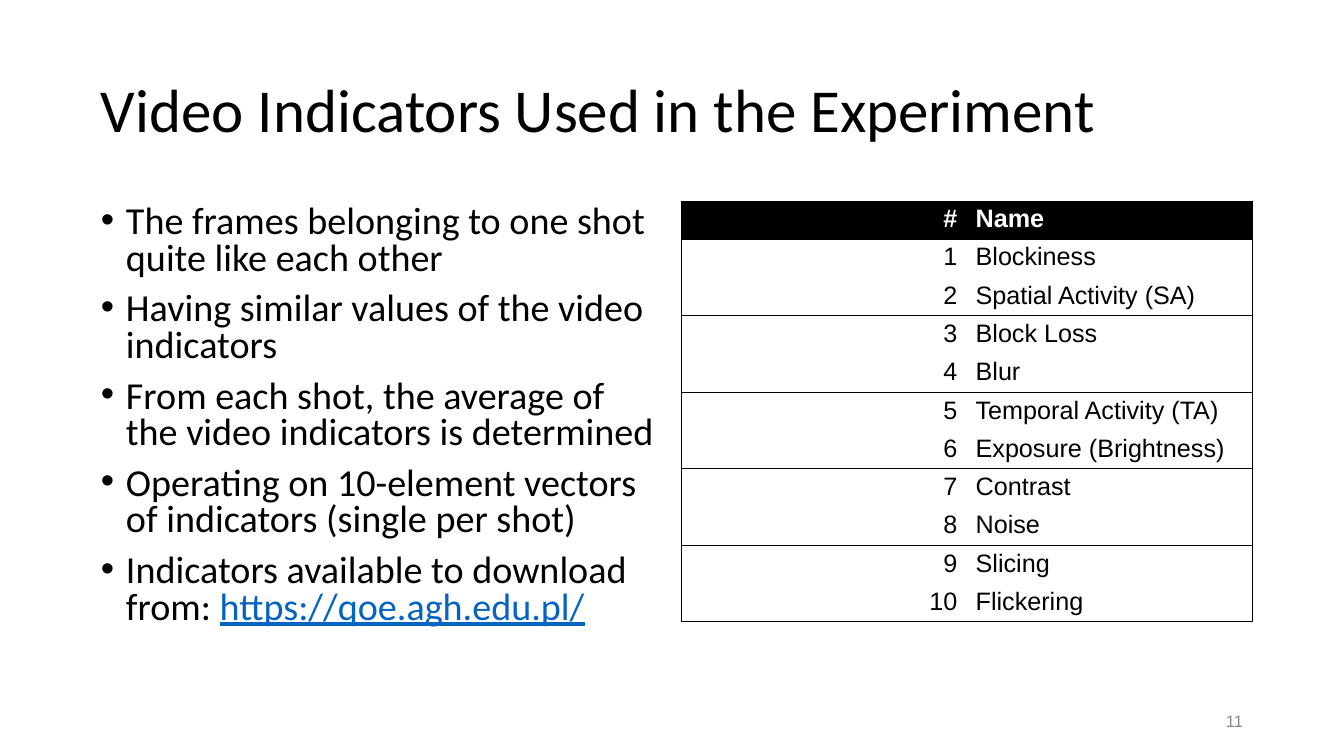
from pptx import Presentation
from pptx.dml.color import RGBColor
from pptx.enum.text import MSO_ANCHOR, PP_ALIGN
from pptx.oxml.ns import qn
from pptx.util import Pt
from lxml.etree import SubElement

EMU_PER_PX = 9993
BLACK, WHITE, GREY, LINK = "000000", "FFFFFF", "898989", "0563C1"
BODY_FONT, TABLE_FONT = "Calibri", "Arial"

BULLETS = [
    "The frames belonging to one shot quite like each other",
    "Having similar values of the video indicators",
    "From each shot, the average of the video indicators is determined",
    "Operating on 10-element vectors of indicators (single per shot)",
    "Indicators available to download from: ",
]
ADDRESS = "https://qoe.agh.edu.pl/"
INDICATORS = [
    "Blockiness", "Spatial Activity (SA)", "Block Loss", "Blur",
    "Temporal Activity (TA)", "Exposure (Brightness)", "Contrast",
    "Noise", "Slicing", "Flickering",
]


def px(length):
    return length * EMU_PER_PX


def colour(value):
    return RGBColor.from_string(value)


class SlideBuilder:
    """Holds the deck, the current slide and the shared text style."""

    def __init__(self, width, height):
        self.deck = Presentation()
        self.deck.slide_width, self.deck.slide_height = px(width), px(height)
        self.page = self.deck.slides.add_slide(self.deck.slide_layouts[6])

    def box(self, left, top, width, height, anchor=MSO_ANCHOR.TOP):
        shape = self.page.shapes.add_textbox(px(left), px(top), px(width), px(height))
        frame = shape.text_frame
        frame.word_wrap = True
        frame.vertical_anchor = anchor
        return frame

    def span(self, para, text, size, font, shade=BLACK, bold=False, underline=None):
        run = para.add_run()
        run.text = text
        run.font.size = Pt(size)
        run.font.name = font
        run.font.color.rgb = colour(shade)
        run.font.bold = bold
        run.font.underline = underline

    def bullet(self, para, indent):
        properties = para._p.get_or_add_pPr()
        properties.set("marL", str(px(indent)))
        properties.set("indent", str(-px(indent)))
        shade = SubElement(properties, qn("a:buClr"))
        SubElement(shade, qn("a:srgbClr"), val=BLACK)
        SubElement(properties, qn("a:buFont"), typeface=TABLE_FONT)
        SubElement(properties, qn("a:buChar"), char="•")

    def title(self, text):
        para = self.box(92, 40, 1159, 146, MSO_ANCHOR.MIDDLE).paragraphs[0]
        para.line_spacing = 0.9
        self.span(para, text, 48, BODY_FONT)

    def bullets(self, items, address):
        frame = self.box(92, 201, 571, 479)
        for index, item in enumerate(items):
            para = frame.add_paragraph() if index else frame.paragraphs[0]
            self.bullet(para, 25)
            para.line_spacing = 0.8
            if index:
                para.space_before = Pt(11)
            self.span(para, item, 30, BODY_FONT)
        self.span(para, address, 30, BODY_FONT, LINK, underline=True)

    def borders(self, cell, drawn):
        properties = cell._tc.get_or_add_tcPr()
        for side in "LRTB":
            line = SubElement(properties, qn(f"a:ln{side}"), w=str(Pt(0.75)))
            if side in drawn:
                fill = SubElement(line, qn("a:solidFill"))
                SubElement(fill, qn("a:srgbClr"), val=BLACK)
            else:
                SubElement(line, qn("a:noFill"))

    def cell(self, cell, text, align, drawn, header):
        cell.margin_top = cell.margin_bottom = px(4)
        self.borders(cell, drawn)
        if header:
            cell.fill.solid()
            cell.fill.fore_color.rgb = colour(BLACK)
        else:
            cell.fill.background()
        para = cell.text_frame.paragraphs[0]
        para.alignment = align
        self.span(para, text, 19.8, TABLE_FONT, WHITE if header else BLACK, header)

    def table(self, names):
        rows = [("#", "Name")] + [(str(i), name) for i, name in enumerate(names, 1)]
        shape = self.page.shapes.add_table(
            len(rows), 2, px(681), px(201), px(571), px(37 * len(rows)))
        table = shape.table
        table.first_row = table.horz_banding = False
        for index, row in enumerate(rows):
            table.rows[index].height = px(37)
            horizontal = "TB" if index == 0 else "T" if index % 2 else "B"
            for column, align in enumerate((PP_ALIGN.RIGHT, PP_ALIGN.LEFT)):
                self.cell(table.cell(index, column), row[column], align,
                          "LR"[column] + horizontal, index == 0)

    def page_number(self, number):
        para = self.box(950, 701, 302, 40, MSO_ANCHOR.MIDDLE).paragraphs[0]
        para.alignment = PP_ALIGN.RIGHT
        self.span(para, number, 13, TABLE_FONT, GREY)


def main():
    slide = SlideBuilder(1344, 756)
    slide.title("Video Indicators Used in the Experiment")
    slide.bullets(BULLETS, ADDRESS)
    slide.table(INDICATORS)
    slide.page_number("11")
    slide.deck.save("out.pptx")


if __name__ == "__main__":
    main()
